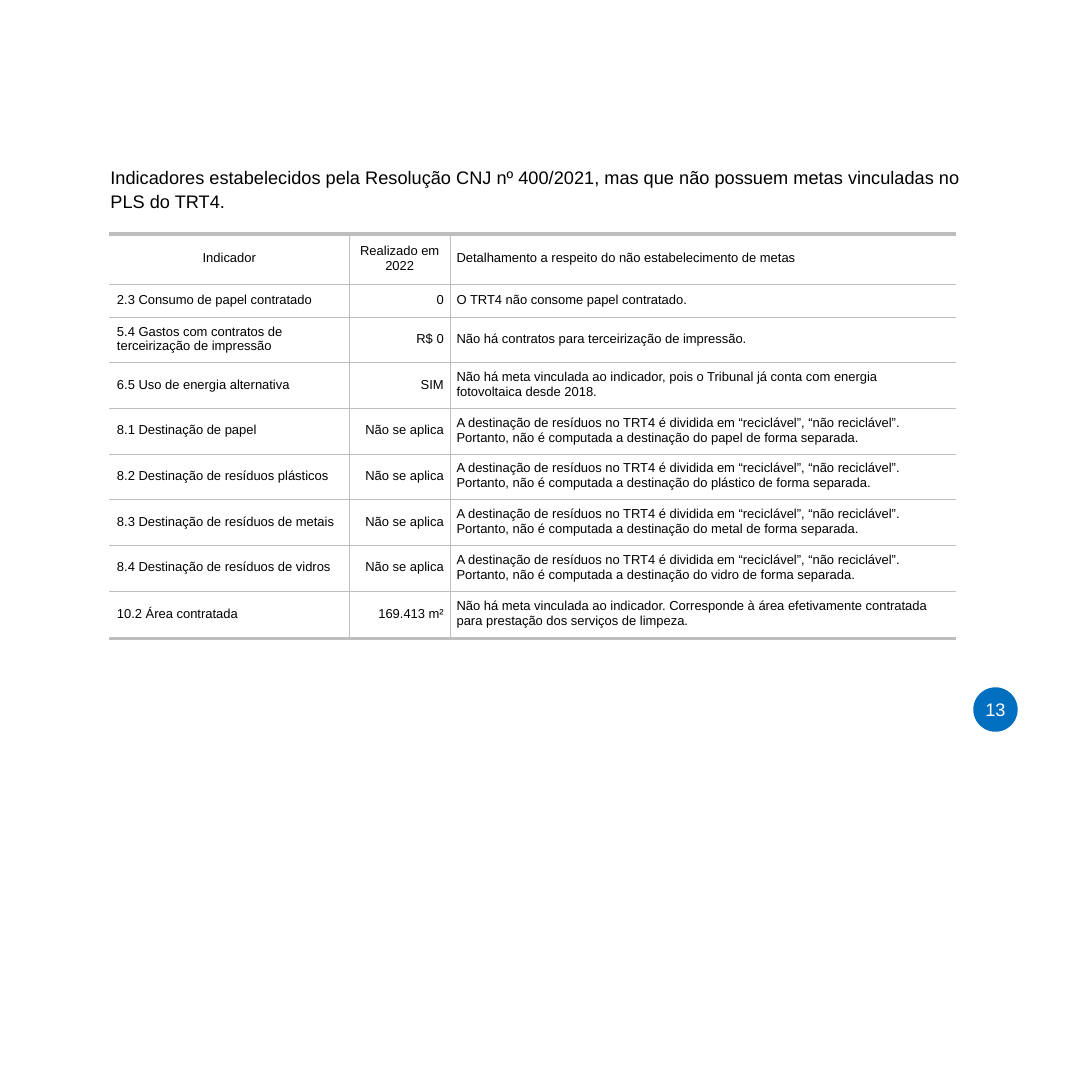
from lxml import etree
from pptx import Presentation
from pptx.dml.color import RGBColor
from pptx.enum.shapes import MSO_SHAPE
from pptx.enum.text import MSO_ANCHOR, MSO_AUTO_SIZE, PP_ALIGN
from pptx.oxml.ns import qn
from pptx.util import Pt

LEFT, CENTER, RIGHT = PP_ALIGN.LEFT, PP_ALIGN.CENTER, PP_ALIGN.RIGHT
TOP, MIDDLE = MSO_ANCHOR.TOP, MSO_ANCHOR.MIDDLE
OVAL = MSO_SHAPE.OVAL
NO_AUTOFIT = MSO_AUTO_SIZE.NONE

FONT = "Arial"
BLACK, WHITE, BLUE, GRAY = "000000", "FFFFFF", "006FC0", "BEBEBE"
THIN, THICK = 0.25, 3

TITLE = (
    "Indicadores estabelecidos pela Resolução CNJ nº 400/2021, "
    "mas que não possuem metas vinculadas no PLS do TRT4."
)
PAGE_NUMBER = "13"
HEADER = (
    "Indicador",
    "Realizado em 2022",
    "Detalhamento a respeito do não estabelecimento de metas",
)
WASTE = (
    ("8.1 Destinação de papel", "papel"),
    ("8.2 Destinação de resíduos plásticos", "plástico"),
    ("8.3 Destinação de resíduos de metais", "metal"),
    ("8.4 Destinação de resíduos de vidros", "vidro"),
)
WASTE_DETAIL = (
    "A destinação de resíduos no TRT4 é dividida em “reciclável”, “não reciclável”. "
    "Portanto, não é computada a destinação do {} de forma separada."
)
ROWS = [
    HEADER,
    ("2.3 Consumo de papel contratado", "0", "O TRT4 não consome papel contratado."),
    (
        "5.4 Gastos com contratos de terceirização de impressão",
        "R$ 0",
        "Não há contratos para terceirização de impressão.",
    ),
    (
        "6.5 Uso de energia alternativa",
        "SIM",
        "Não há meta vinculada ao indicador, pois o Tribunal já conta com energia "
        "fotovoltaica desde 2018.",
    ),
    *[(name, "Não se aplica", WASTE_DETAIL.format(material)) for name, material in WASTE],
    (
        "10.2 Área contratada",
        "169.413 m²",
        "Não há meta vinculada ao indicador. Corresponde à área efetivamente contratada "
        "para prestação dos serviços de limpeza.",
    ),
]

PAGE_SIZE = 841.7
TABLE_LEFT, TABLE_TOP = 84.2, 180.2
COLUMN_WIDTHS = (185, 77.8, 390.2)
ROW_HEIGHTS = [38.9, 25.2] + [35.2] * 6 + [36.7]
HEADER_ALIGNMENT = (CENTER, CENTER, LEFT)
BODY_ALIGNMENT = (LEFT, RIGHT, LEFT)
SIDE_MARGINS = ((6, 0), (5, 5), (5, 18))


def color(value):
    return RGBColor.from_string(value)


def set_margins(target, left=0, top=0, right=0, bottom=0):
    target.margin_left, target.margin_right = Pt(left), Pt(right)
    target.margin_top, target.margin_bottom = Pt(top), Pt(bottom)


def format_text(frame, size, hex_color, alignment, spacing):
    para = frame.paragraphs[0]
    para.alignment = alignment
    para.line_spacing = spacing
    for span in para.runs:
        span.font.name = FONT
        span.font.size = Pt(size)
        span.font.color.rgb = color(hex_color)


def set_borders(cell, widths):
    properties = cell._tc.get_or_add_tcPr()
    for index, (side, width) in enumerate(zip("LRTB", widths)):
        line = etree.Element(qn(f"a:ln{side}"), w=str(Pt(width)))
        if width:
            fill = etree.SubElement(line, qn("a:solidFill"))
            etree.SubElement(fill, qn("a:srgbClr"), val=GRAY)
        else:
            etree.SubElement(line, qn("a:noFill"))
        properties.insert(index, line)


def add_title(page):
    title = page.shapes.title
    title.left, title.top, title.width, title.height = Pt(84.2), Pt(124.6), Pt(670), Pt(39)
    frame = title.text_frame
    frame.text = TITLE
    frame.word_wrap = True
    frame.auto_size = NO_AUTOFIT
    frame.vertical_anchor = TOP
    set_margins(frame, left=0.9, top=1.7)
    format_text(frame, 14, BLACK, LEFT, 1.11)


def add_indicators(page):
    last_row, last_column = len(ROWS) - 1, len(HEADER) - 1
    table = page.shapes.add_table(
        len(ROWS), len(HEADER), Pt(TABLE_LEFT), Pt(TABLE_TOP),
        Pt(sum(COLUMN_WIDTHS)), Pt(sum(ROW_HEIGHTS)),
    ).table
    table.first_row = table.horz_banding = False
    for column, width in zip(table.columns, COLUMN_WIDTHS):
        column.width = Pt(width)
    for row_index, values in enumerate(ROWS):
        table.rows[row_index].height = Pt(ROW_HEIGHTS[row_index])
        alignments = BODY_ALIGNMENT if row_index else HEADER_ALIGNMENT
        for column_index, value in enumerate(values):
            cell = table.cell(row_index, column_index)
            cell.text_frame.text = value
            cell.vertical_anchor = MIDDLE
            left, right = SIDE_MARGINS[column_index]
            if alignments[column_index] == CENTER:
                left = right = 0
            set_margins(cell, left=left, right=right, bottom=1.5)
            format_text(cell.text_frame, 10, BLACK, alignments[column_index], Pt(11.5))
            cell.fill.background()
            set_borders(cell, (
                THIN if column_index else 0,
                THIN if column_index < last_column else 0,
                THIN if row_index else THICK,
                THIN if row_index < last_row else THICK,
            ))


def add_page_number(page):
    badge = page.shapes.add_shape(OVAL, Pt(750.2), Pt(529.8), Pt(34.2), Pt(34.2))
    badge.shadow.inherit = False
    badge.fill.solid()
    badge.fill.fore_color.rgb = color(BLUE)
    badge.line.fill.background()
    frame = badge.text_frame
    frame.text = PAGE_NUMBER
    frame.word_wrap = False
    frame.vertical_anchor = MIDDLE
    set_margins(frame)
    format_text(frame, 14, WHITE, CENTER, 1)


def main():
    deck = Presentation()
    deck.slide_width = deck.slide_height = Pt(PAGE_SIZE)
    page = deck.slides.add_slide(deck.slide_layouts[5])
    add_title(page)
    add_indicators(page)
    add_page_number(page)
    deck.save("out.pptx")


if __name__ == "__main__":
    main()
